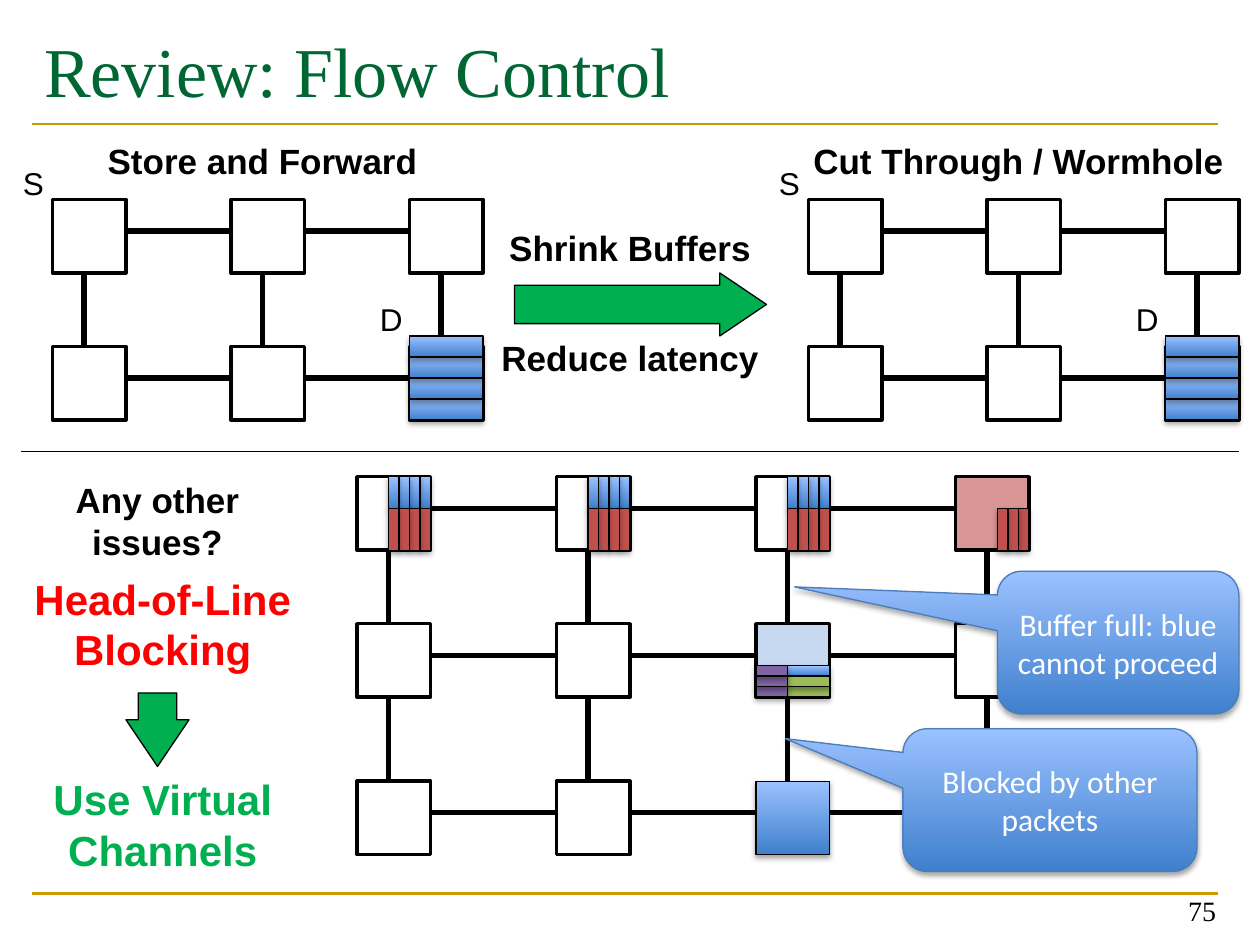
from dataclasses import dataclass
from itertools import product
from lxml.etree import SubElement
from pptx import Presentation
from pptx.dml.color import RGBColor
from pptx.enum.shapes import MSO_CONNECTOR, MSO_SHAPE
from pptx.enum.text import MSO_ANCHOR, PP_ALIGN
from pptx.oxml.ns import qn
from pptx.util import Inches, Pt


@dataclass(frozen=True)
class Theme:
    black: str = "000000"
    white: str = "FFFFFF"
    gold: str = "CC9900"
    pine: str = "006633"
    green: str = "00B050"
    alert: str = "FF0000"
    edge: str = "4A7EBB"
    pale: str = "C6D9F1"
    pink: str = "D99694"
    red: str = "C0504D"
    olive: str = "9BBB59"
    plum: str = "8064A2"
    blue: tuple = ("3F80CD", "9BC1FF")
    serif: str = "Times New Roman"
    sans: str = "Arial"
    round: str = "Calibri"
    huge: int = 40
    large: int = 24
    head: int = 20
    body: int = 18
    small: int = 16
    thin: float = 0.75
    rule: float = 1.5
    frame: float = 2
    link: float = 3


COLS, ROWS = 120, 90
BOX, PORT = 7, 3
CENTER, LEFT, RIGHT = PP_ALIGN.CENTER, PP_ALIGN.LEFT, PP_ALIGN.RIGHT
TOP, MIDDLE, BOTTOM = MSO_ANCHOR.TOP, MSO_ANCHOR.MIDDLE, MSO_ANCHOR.BOTTOM


class Board:
    def __init__(self, deck, theme):
        self.theme = theme
        self.wide, self.high = deck.slide_width, deck.slide_height
        self.slide = deck.slides.add_slide(deck.slide_layouts[5])
        self.shapes = self.slide.shapes

    def scale(self, *spots):
        units = (self.wide / COLS, self.high / ROWS)
        return [round(spot * units[i % 2]) for i, spot in enumerate(spots)]

    def letter(self, shape, lines, size, color, name, bold=False,
               align=CENTER, anchor=TOP, gap=0):
        frame = shape.text_frame
        frame.word_wrap = True
        frame.vertical_anchor = anchor
        look = {"size": Pt(size), "name": name, "bold": bold}
        for i, line in enumerate(lines):
            para = frame.add_paragraph() if i else frame.paragraphs[0]
            para.alignment = align
            para.space_before = Pt(gap if i else 0)
            run = para.add_run()
            run.text = line
            for key, value in look.items():
                setattr(run.font, key, value)
            run.font.color.rgb = RGBColor.from_string(color)

    def title(self, text, place):
        shape = self.shapes.title
        for key, value in zip(("left", "top", "width", "height"), self.scale(*place)):
            setattr(shape, key, value)
        self.letter(shape, [text], self.theme.huge, self.theme.pine,
                    self.theme.serif, align=LEFT)

    def label(self, place, lines, size, color=None, name=None, **style):
        shape = self.shapes.add_textbox(*self.scale(*place))
        self.letter(shape, lines, size, color or self.theme.black,
                    name or self.theme.sans, **style)

    def line(self, start, end, width, color=None):
        link = self.shapes.add_connector(
            MSO_CONNECTOR.STRAIGHT, *self.scale(*start, *end))
        link.line.width = Pt(width)
        link.line.color.rgb = RGBColor.from_string(color or self.theme.black)
        SubElement(link._element.spPr, qn("a:effectLst"))

    def shape(self, place, fill=None, width=None, kind=MSO_SHAPE.RECTANGLE,
              color=None, shadow=False, bends=(), turn=0):
        shape = self.shapes.add_shape(kind, *self.scale(*place))
        shape.rotation = turn
        for i, bend in enumerate(bends):
            shape.adjustments[i] = bend
        if fill is None:
            shape.fill.background()
        elif isinstance(fill, tuple):
            shape.fill.gradient()
            shape.fill.gradient_angle = 90
            for stop, tone in zip(shape.fill.gradient_stops, fill):
                stop.color.rgb = RGBColor.from_string(tone)
        else:
            shape.fill.solid()
            shape.fill.fore_color.rgb = RGBColor.from_string(fill)
        shape.line.width = Pt(width or self.theme.thin)
        shape.line.color.rgb = RGBColor.from_string(color or self.theme.black)
        shape.shadow.inherit = False
        if shadow:
            self.shade(shape)
        return shape

    def shade(self, shape):
        root = shape._element.spPr.find(qn("a:effectLst"))
        cast = SubElement(root, qn("a:outerShdw"), blurRad="39370", dist="22860",
                          dir="5400000", rotWithShape="0")
        tone = SubElement(cast, qn("a:srgbClr"), val=self.theme.black)
        SubElement(tone, qn("a:alpha"), val="35000")

    def mesh(self, xs, ys, fills):
        for x, y in product(xs, ys):
            fill = fills.get((x, y))
            if fill != self.theme.blue:
                self.shape((x, y, BOX, BOX), fill, self.theme.frame)
        for y, (a, b) in product(ys, zip(xs, xs[1:])):
            self.line((a + BOX, y + PORT), (b, y + PORT), self.theme.link)
        for x, (a, b) in product(xs, zip(ys, ys[1:])):
            self.line((x + PORT, a + BOX), (x + PORT, b), self.theme.link)
        for (x, y), fill in fills.items():
            if fill == self.theme.blue:
                self.shape((x, y, BOX, BOX), fill, shadow=True)

    def stack(self, place, count, step, fill):
        x, y, w, h = place
        for i in reversed(range(count)):
            self.shape((x + i * step[0], y + i * step[1], w, h), fill, shadow=True)

    def arrow(self, place, turn=0):
        self.shape(place, self.theme.green, kind=MSO_SHAPE.RIGHT_ARROW,
                   bends=(0.61, 0.74), turn=turn)

    def callout(self, place, text, tip):
        shape = self.shape(place, self.theme.blue, color=self.theme.edge, shadow=True,
                           kind=MSO_SHAPE.ROUNDED_RECTANGULAR_CALLOUT,
                           bends=(*tip, 0.17))
        self.letter(shape, [text], self.theme.body, self.theme.white,
                    self.theme.round, anchor=MIDDLE)


def main():
    deck = Presentation()
    deck.slide_width, deck.slide_height = Inches(10), Inches(7.5)
    theme = Theme()
    board = Board(deck, theme)

    for y in (11.8, 85.1):
        board.line((3, y), (116, y), theme.rule, theme.gold)
    board.title("Review: Flow Control", (3, 2, 113, 14))
    board.label((89, 82.9, 28, 6), ["75"], theme.small, name=theme.serif,
                align=RIGHT, anchor=BOTTOM)

    for x in (0, 72):
        board.mesh([x + 5, x + 22, x + 39], [19, 33], {})
        board.label((x + 1, 15, 9, 4.8), ["S"], theme.body, align=LEFT)
        board.label((x + 35, 28, 9, 4.8), ["D"], theme.body, align=LEFT)
        board.stack((x + 39, 32, BOX, 2), 4, (0, 2), theme.blue)

    for place, text in (((8, 12.7, 34, 9.2), "Store and Forward"),
                        ((73, 12.7, 48, 5.3), "Cut Through / Wormhole"),
                        ((2, 45, 26, 13.3), "Any other issues?")):
        board.label(place, [text], theme.head, bold=True)
    board.line((2, 43), (118, 43), theme.thin)
    board.arrow((49, 26, 24, 6))
    board.label((43, 21, 34, 15.7), ["Shrink Buffers", "Reduce latency"],
                theme.head, bold=True, gap=39)
    board.label((2, 54, 27, 14.9), ["Head-of-Line", "Blocking"],
                theme.large, theme.alert, bold=True)
    board.label((2, 73.1, 27, 10.9), ["Use Virtual", "Channels"],
                theme.large, theme.green, bold=True)
    board.arrow((11.5, 66.5, 7, 6), 90)

    xs, ys = [34, 53, 72, 91], [45.4, 59.4, 74.4]
    first, second, third = ys
    board.mesh(xs, ys, {(72, second): theme.pale, (91, first): theme.pink,
                        (72, third): theme.blue})
    for x in xs[:3]:
        board.stack((x + PORT, first, 1, 3), 4, (1, 0), theme.blue)
        board.stack((x + PORT, first + 3, 1, 4), 4, (1, 0), theme.red)
    board.stack((95, first + 3, 1, 4), 3, (1, 0), theme.red)
    board.stack((75, second + 4, 4, 1), 1, (0, 1), theme.blue)
    board.stack((75, second + 5, 4, 1), 2, (0, 1), theme.olive)
    board.stack((72, second + 4, 3, 1), 3, (0, 1), theme.plum)

    board.callout((86, 69.4, 28, 13.6), "Blocked by other packets", (-0.9, -0.43))
    board.callout((95, 54.4, 23, 13.6), "Buffer full: blue cannot proceed",
                  (-1.34, -0.39))
    deck.save("out.pptx")


if __name__ == "__main__":
    main()
